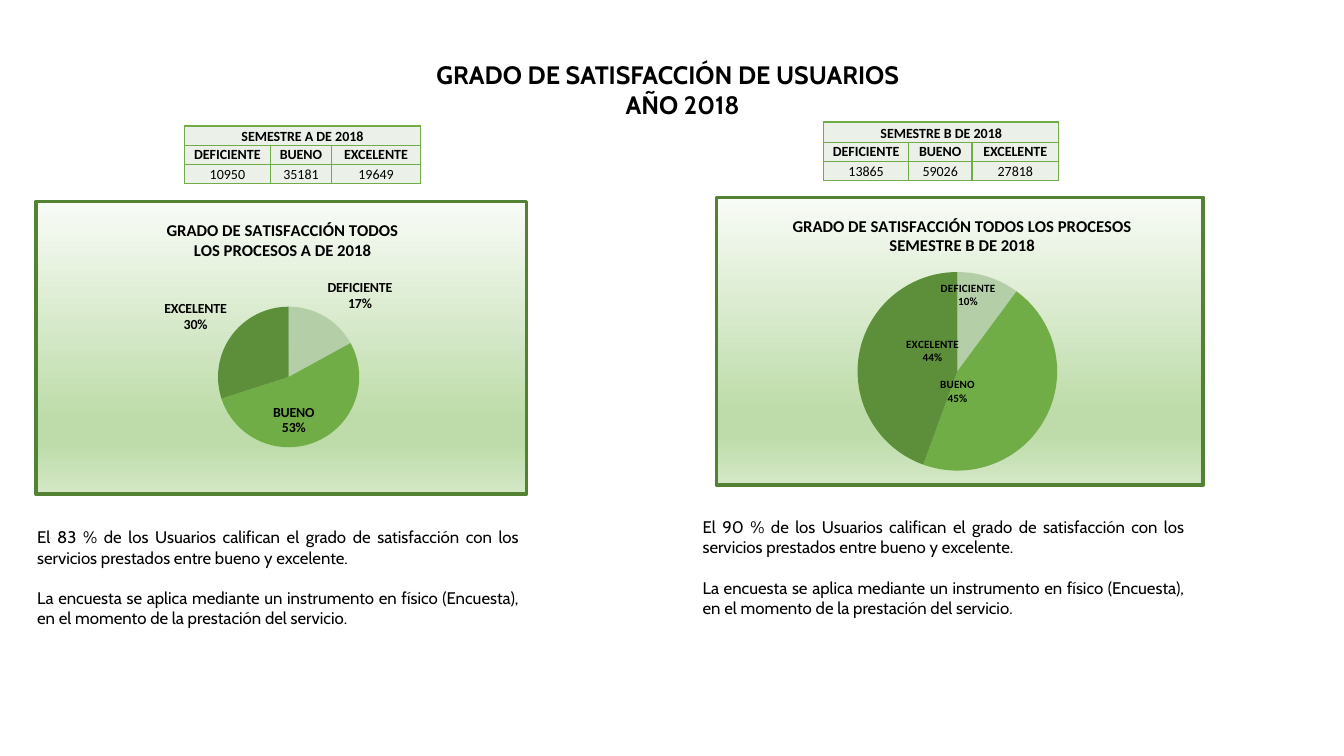
"""Build the 2018 user satisfaction slide: two survey tables, two pie charts and their findings."""
import pptx
import pptx.chart.data
import pptx.dml.color
import pptx.enum.chart
import pptx.enum.text
import pptx.oxml
import pptx.oxml.ns
import pptx.util

Inches = pptx.util.Inches
Pt = pptx.util.Pt
ALIGN = pptx.enum.text.PP_ALIGN
ANCHOR = pptx.enum.text.MSO_ANCHOR
LABEL = pptx.enum.chart.XL_LABEL_POSITION

THEME = {
    "text": "000000", "cell": "EBF1E9", "grid": "70AD47", "frame": "548235",
    "slices": ["B4CFA8", "70AD47", "5D8F3B"],
    "gradient": [(0, "F8FBF6"), (74, "BEDCAA"), (83, "BEDCAA"), (100, "D4E8C6")],
    "heading_font": "Cabin", "data_font": "Calibri",
    "heading_size": 18, "body_size": 12, "chart_title_size": 12, "table_size": 10,
}
GRADES = ["DEFICIENTE", "BUENO", "EXCELENTE"]
HEADING = {
    "box": (4.23, 0.54, 5.08, 0.71),
    "lines": [("GRADO DE SATISFACCIÓN DE USUARIOS", ALIGN.JUSTIFY), ("AÑO 2018", ALIGN.CENTER)],
}
FINDING = "El {} % de los Usuarios califican el grado de satisfacción con los servicios prestados entre bueno y excelente."
METHOD = "La encuesta se aplica mediante un instrumento en físico (Encuesta), en el momento de la prestación del servicio."
SEMESTERS = [
    {
        "name": "SEMESTRE A DE 2018", "counts": [10950, 35181, 19649], "approval": 83,
        "table_at": (1.83, 1.25), "columns": [0.85, 0.61, 0.88], "rows": [0.19, 0.19, 0.19],
        "chart_box": (0.34, 1.98, 4.9, 2.94), "text_box": (0.27, 5.18, 4.98, 1.11),
        "title": ["GRADO DE SATISFACCIÓN TODOS", "LOS PROCESOS A DE 2018"], "title_at": (0.26, 0.05),
        "shares": [17, 53, 30], "plot": (0.37, 0.36, 0.29, 0.48), "label_size": 10,
        "positions": [LABEL.OUTSIDE_END, LABEL.INSIDE_END, LABEL.OUTSIDE_END], "shifts": [],
    },
    {
        "name": "SEMESTRE B DE 2018", "counts": [13865, 59026, 27818], "approval": 90,
        "table_at": (8.17, 1.21), "columns": [0.84, 0.63, 0.86], "rows": [0.2, 0.19, 0.19],
        "chart_box": (7.09, 1.94, 4.86, 2.89), "text_box": (6.87, 5.08, 4.98, 1.11),
        "title": ["GRADO DE SATISFACCIÓN TODOS LOS PROCESOS", "SEMESTRE B DE 2018"], "title_at": (0.15, 0.05),
        "shares": [10, 45, 44], "plot": (0.01, 0.26, 0.97, 0.69), "label_size": 8,
        "positions": [LABEL.CENTER] * 3, "shifts": [(-0.01, -0.1), (-0.09, -0.01), (0.05, -0.04)],
    },
]


def color(name):
    return pptx.dml.color.RGBColor.from_string(name)


def set_font(font, name, size, bold=False):
    for key, value in {"name": name, "size": Pt(size), "bold": bold}.items():
        setattr(font, key, value)
    font.color.rgb = color(THEME["text"])


def parse_xml(tag, content, attributes=""):
    namespaces = pptx.oxml.ns.nsdecls("a", "c")
    return pptx.oxml.parse_xml(f"<{tag} {namespaces} {attributes}>{content}</{tag}>")


def solid(name):
    return f'<a:solidFill><a:srgbClr val="{name}"/></a:solidFill>'


def set_layout(element, index, values, modes=""):
    for old in element.findall(pptx.oxml.ns.qn("c:layout")):
        element.remove(old)
    parts = "".join(f'<c:{key} val="{value}"/>' for key, value in zip("xywh", values))
    element.insert(index, parse_xml("c:layout", f"<c:manualLayout>{modes}{parts}</c:manualLayout>"))


def add_text(slide, box, lines, size, bold, gap=0):
    frame = slide.shapes.add_textbox(*map(Inches, box)).text_frame
    frame.word_wrap = True
    for index, (text, alignment) in enumerate(lines):
        paragraph = frame.add_paragraph() if index else frame.paragraphs[0]
        paragraph.alignment = alignment
        if index and gap:
            paragraph.space_before = Pt(gap)
        run = paragraph.add_run()
        run.text = text
        set_font(run.font, THEME["heading_font"], size, bold)


def fill_cell(cell, text, bold, anchor):
    margins = {f"margin_{side}": Inches(0.01) for side in ("left", "right", "top")}
    for key, value in {**margins, "margin_bottom": 0, "vertical_anchor": anchor}.items():
        setattr(cell, key, value)
    cell.fill.solid()
    cell.fill.fore_color.rgb = color(THEME["cell"])
    properties = cell._tc.get_or_add_tcPr()
    for index, side in enumerate("LRTB"):
        properties.insert(index, parse_xml(f"a:ln{side}", solid(THEME["grid"]), f'w="{Pt(1)}"'))
    paragraph = cell.text_frame.paragraphs[0]
    paragraph.alignment = ALIGN.CENTER
    set_font(paragraph.font, THEME["data_font"], THEME["table_size"], bold)
    if text:
        run = paragraph.add_run()
        run.text = text
        set_font(run.font, THEME["data_font"], THEME["table_size"], bold)


def add_counts_table(slide, semester):
    columns, rows = semester["columns"], semester["rows"]
    box = (*semester["table_at"], sum(columns), sum(rows))
    table = slide.shapes.add_table(len(rows), len(columns), *map(Inches, box)).table
    for column, width in zip(table.columns, columns):
        column.width = Inches(width)
    for row, height in zip(table.rows, rows):
        row.height = Inches(height)
    content = [[semester["name"], "", ""], GRADES, map(str, semester["counts"])]
    for row, texts in enumerate(content):
        for column, text in enumerate(texts):
            anchor = ANCHOR.MIDDLE if row else ANCHOR.BOTTOM
            fill_cell(table.cell(row, column), text, row < 2, anchor)
    table.cell(0, 0).merge(table.cell(0, len(columns) - 1))


def style_chart_area(chart):
    stops = "".join(
        f'<a:gs pos="{position * 1000}"><a:srgbClr val="{name}"/></a:gs>'
        for position, name in THEME["gradient"])
    gradient = f'<a:gradFill><a:gsLst>{stops}</a:gsLst><a:lin ang="5400000" scaled="0"/></a:gradFill>'
    border = f'<a:ln w="{Pt(2.5)}">{solid(THEME["frame"])}<a:round/></a:ln>'
    area = chart.element.find(pptx.oxml.ns.qn("c:chart"))
    area.addnext(parse_xml("c:spPr", gradient + border))


def add_share_chart(slide, semester):
    data = pptx.chart.data.CategoryChartData()
    data.categories = GRADES
    data.add_series("Series 1", semester["shares"])
    kind = pptx.enum.chart.XL_CHART_TYPE.PIE
    chart = slide.shapes.add_chart(kind, *map(Inches, semester["chart_box"]), data).chart
    chart.has_legend = False
    set_font(chart.font, THEME["data_font"], semester["label_size"])
    style_chart_area(chart)
    frame = chart.chart_title.text_frame
    for index, text in enumerate(semester["title"]):
        paragraph = frame.add_paragraph() if index else frame.paragraphs[0]
        paragraph.alignment = ALIGN.CENTER
        run = paragraph.add_run()
        run.text = text
        for font in (paragraph.font, run.font):
            set_font(font, THEME["data_font"], THEME["chart_title_size"], True)
    edges = '<c:xMode val="edge"/><c:yMode val="edge"/>'
    set_layout(chart.element.xpath("c:chart/c:title")[0], 1, semester["title_at"], edges)
    inner = '<c:layoutTarget val="inner"/>' + edges
    set_layout(chart.element.xpath("c:chart/c:plotArea")[0], 0, semester["plot"], inner)
    plot = chart.plots[0]
    plot.vary_by_categories = True
    for index, name in enumerate(THEME["slices"]):
        point = plot.series[0].points[index]
        point.format.fill.solid()
        point.format.fill.fore_color.rgb = color(name)
        point.format.line.fill.background()
        set_font(point.data_label.font, THEME["data_font"], semester["label_size"], True)
        point.data_label.position = semester["positions"][index]
    for label in chart.element.xpath(".//c:dLbl"):
        for key, value in {"showVal": 0, "showCatName": 1, "showPercent": 1}.items():
            label.find(pptx.oxml.ns.qn(f"c:{key}")).set("val", str(value))
        label.append(parse_xml("c:separator", "\n"))
    for label, shift in zip(chart.element.xpath(".//c:dLbl"), semester["shifts"]):
        set_layout(label, 1, shift)


def main():
    presentation = pptx.Presentation()
    presentation.slide_width, presentation.slide_height = Inches(13.33), Inches(7.5)
    slide = presentation.slides.add_slide(presentation.slide_layouts[6])
    add_text(slide, HEADING["box"], HEADING["lines"], THEME["heading_size"], True)
    for semester in SEMESTERS:
        add_share_chart(slide, semester)
        add_counts_table(slide, semester)
        lines = [(text, ALIGN.JUSTIFY) for text in (FINDING.format(semester["approval"]), METHOD)]
        add_text(slide, semester["text_box"], lines, THEME["body_size"], False, gap=14.3)
    presentation.save("out.pptx")


if __name__ == "__main__":
    main()
